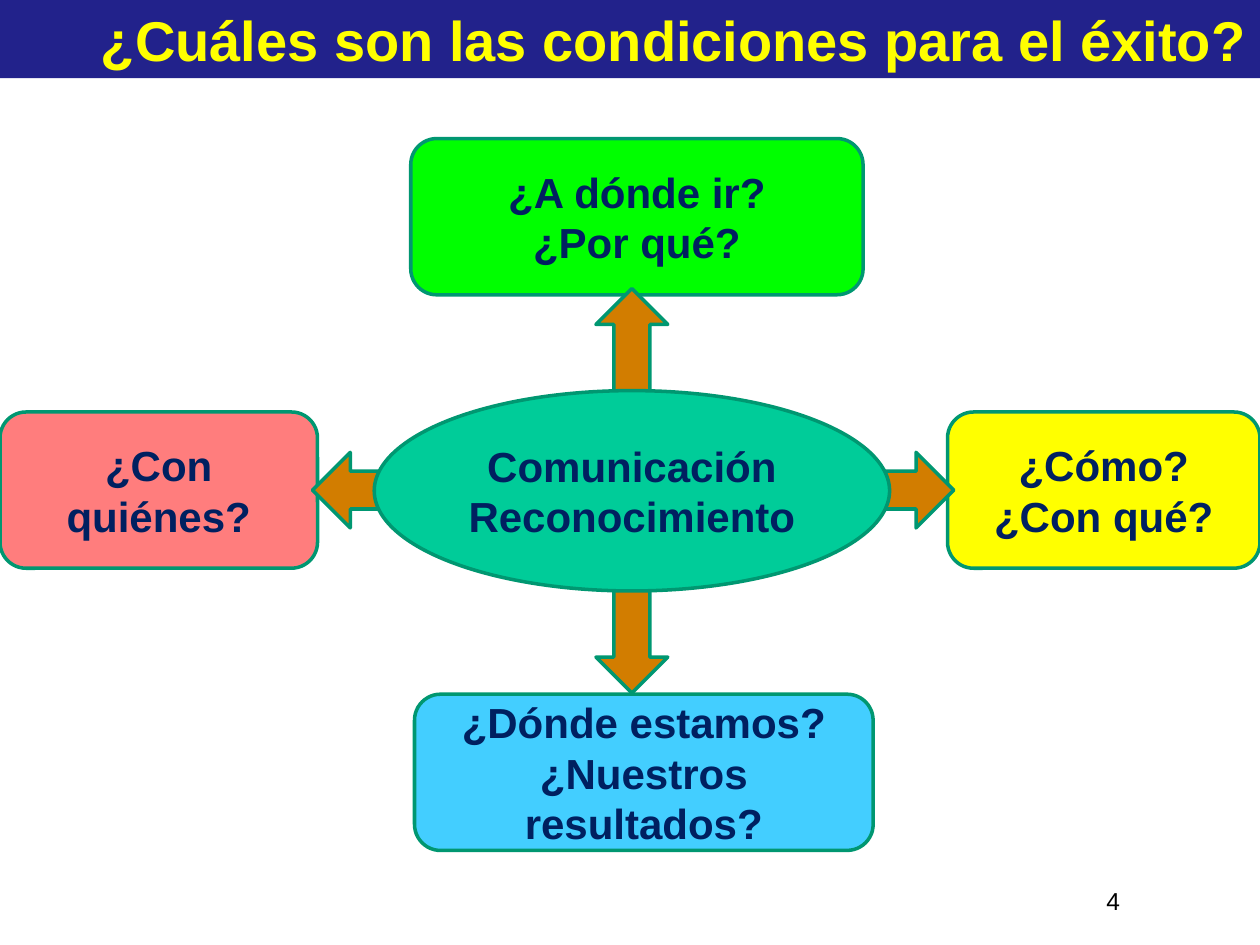
from pptx import Presentation
from pptx.dml.color import RGBColor
from pptx.enum.shapes import MSO_SHAPE
from pptx.enum.text import MSO_ANCHOR, PP_ALIGN
from pptx.util import Inches, Pt

NAVY = RGBColor(0x22, 0x22, 0x8B)
INK = RGBColor(0x00, 0x20, 0x60)
BLACK = RGBColor(0x00, 0x00, 0x00)
YELLOW = RGBColor(0xFF, 0xFF, 0x00)
LIME = RGBColor(0x00, 0xFF, 0x00)
SKY = RGBColor(0x43, 0xCE, 0xFF)
CORAL = RGBColor(0xFF, 0x7D, 0x7D)
ORANGE = RGBColor(0xD2, 0x7D, 0x00)
TEAL = RGBColor(0x00, 0xCC, 0x99)
OUTLINE = RGBColor(0x00, 0x97, 0x71)

BOX_HEIGHT = 1.24
SIDE_TOP = 3.27

# Question boxes: left, top, width, fill, lines
QUESTIONS = [
    (3.26, 1.1, 3.59, LIME, ["¿A dónde ir?", "¿Por qué?"]),
    (3.29, 5.51, 3.64, SKY, ["¿Dónde estamos?", "¿Nuestros resultados?"]),
    (7.52, SIDE_TOP, 2.48, YELLOW, ["¿Cómo?", "¿Con qué?"]),
    (0, SIDE_TOP, 2.52, CORAL, ["¿Con quiénes?"]),
]


def write_text(shape, lines, size, color, bold=True, align=PP_ALIGN.CENTER,
               anchor=MSO_ANCHOR.MIDDLE):
    frame = shape.text_frame
    frame.text = "\n".join(lines)
    frame.word_wrap = True
    frame.vertical_anchor = anchor
    for paragraph in frame.paragraphs:
        paragraph.alignment = align
        for run in paragraph.runs:
            run.font.name = "Arial"
            run.font.size = Pt(size)
            run.font.bold = bold
            run.font.color.rgb = color


def add_figure(slide, preset, left, top, width, height, fill, outlined=True):
    figure = slide.shapes.add_shape(
        preset, Inches(left), Inches(top), Inches(width), Inches(height))
    figure.shadow.inherit = False
    figure.fill.solid()
    figure.fill.fore_color.rgb = fill
    if outlined:
        figure.line.color.rgb = OUTLINE
        figure.line.width = Pt(2)
    else:
        figure.line.fill.background()
    return figure


def add_title(slide, text):
    banner = add_figure(slide, MSO_SHAPE.RECTANGLE, 0, 0, 10, 0.62, NAVY,
                        outlined=False)
    write_text(banner, [text], 32, YELLOW, align=PP_ALIGN.RIGHT)


def add_page_number(slide, number):
    page_number = slide.shapes.add_textbox(
        Inches(7.67), Inches(6.98), Inches(2.33), Inches(0.52))
    write_text(page_number, [number], 14, BLACK, bold=False,
               anchor=MSO_ANCHOR.TOP)


def main():
    deck = Presentation()
    deck.slide_width, deck.slide_height = Inches(10), Inches(7.5)
    slide = deck.slides.add_slide(deck.slide_layouts[6])

    add_title(slide, "¿Cuáles son las condiciones para el éxito?")

    # Questions around the centre
    for left, top, width, fill, lines in QUESTIONS:
        question = add_figure(slide, MSO_SHAPE.ROUNDED_RECTANGLE,
                              left, top, width, BOX_HEIGHT, fill)
        write_text(question, lines, 24, INK)

    # Arrows from the centre to the questions
    add_figure(slide, MSO_SHAPE.LEFT_RIGHT_ARROW, 2.48, 3.59, 5.09, 0.6, ORANGE)
    add_figure(slide, MSO_SHAPE.UP_DOWN_ARROW, 4.73, 2.29, 0.57, 3.21, ORANGE)

    # Central idea
    core = add_figure(slide, MSO_SHAPE.OVAL, 2.97, 3.1, 4.09, 1.59, TEAL)
    write_text(core, ["Comunicación", "Reconocimiento"], 24, INK)

    add_page_number(slide, "4")
    deck.save("out.pptx")


if __name__ == "__main__":
    main()
